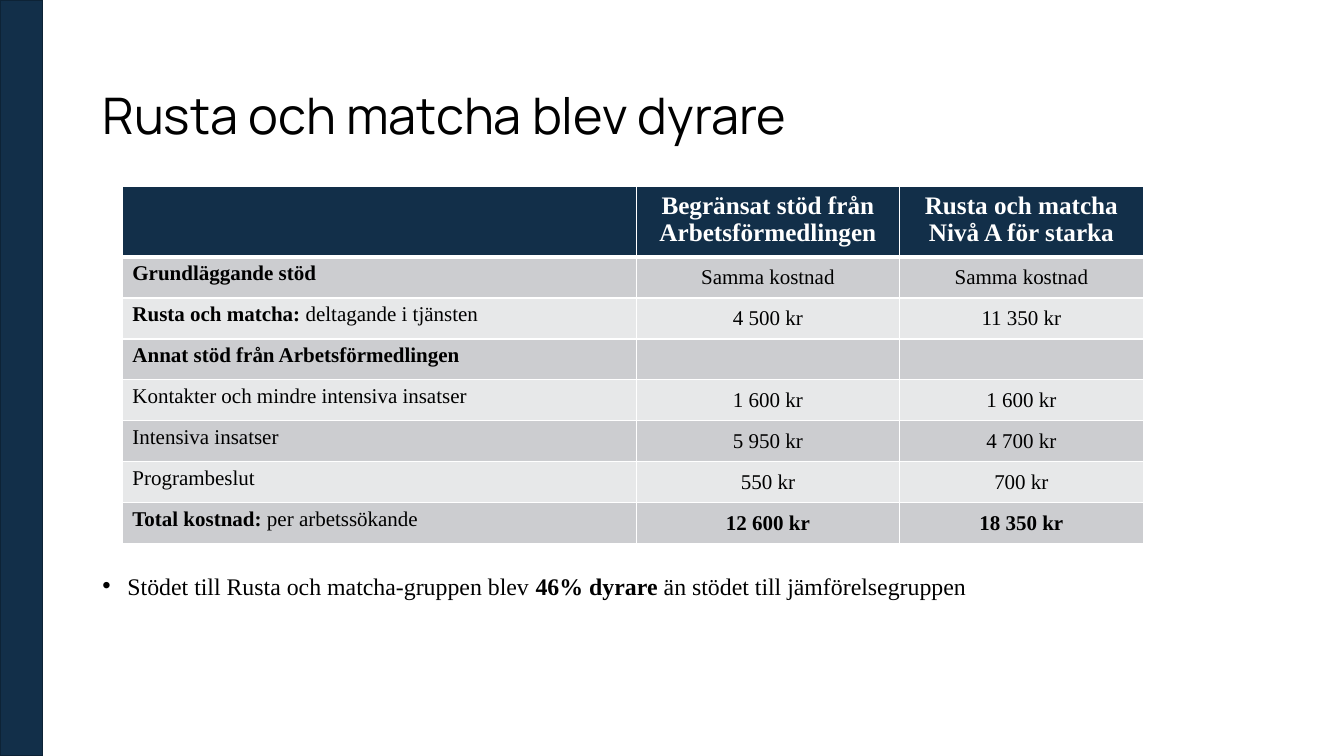
from dataclasses import dataclass

from lxml import etree
from pptx import Presentation
from pptx.dml.color import RGBColor
from pptx.enum.shapes import MSO_SHAPE
from pptx.enum.text import MSO_ANCHOR, PP_ALIGN
from pptx.oxml.ns import qn
from pptx.util import Pt

RECTANGLE = MSO_SHAPE.RECTANGLE
TOP, MIDDLE, BOTTOM = MSO_ANCHOR.TOP, MSO_ANCHOR.MIDDLE, MSO_ANCHOR.BOTTOM
LEFT, CENTER = PP_ALIGN.LEFT, PP_ALIGN.CENTER


@dataclass(frozen=True)
class Theme:
    navy: str = "122F49"
    navy_edge: str = "0D2336"
    white: str = "FFFFFF"
    black: str = "000000"
    bands: tuple = ("CCCDD0", "E7E8E9")
    heading_font: str = "Manrope"
    body_font: str = "Times New Roman"
    title_size: float = 36
    header_size: float = 18
    cell_size: float = 15
    bullet_size: float = 17


THEME = Theme()
COLUMN_WIDTHS = (367.2, 187.9, 174.2)
HEADER_HEIGHT = 46
ROW_HEIGHT = 29.25

HEADER = ("", "Begränsat stöd från Arbetsförmedlingen", "Rusta och matcha\nNivå A för starka")
COST_ROWS = (
    ("Grundläggande stöd", "", "Samma kostnad", "Samma kostnad"),
    ("Rusta och matcha: ", "deltagande i tjänsten", "4 500 kr", "11 350 kr"),
    ("Annat stöd från Arbetsförmedlingen", "", "", ""),
    ("", "Kontakter och mindre intensiva insatser", "1 600 kr", "1 600 kr"),
    ("", "Intensiva insatser", "5 950 kr", "4 700 kr"),
    ("", "Programbeslut", "550 kr", "700 kr"),
    ("Total kostnad:", " per arbetssökande", "12 600 kr", "18 350 kr"),
)


def set_font(font, name, size, color, bold=False):
    font.name = name
    font.size = Pt(size)
    font.bold = bold
    font.color.rgb = RGBColor.from_string(color)


def add_runs(paragraph, parts, size):
    for text, bold in parts:
        if text:
            run = paragraph.add_run()
            run.text = text
            set_font(run.font, THEME.body_font, size, THEME.black, bold)


def add_side_bar(slide, left, top, width, height):
    bar = slide.shapes.add_shape(RECTANGLE, Pt(left), Pt(top), Pt(width), Pt(height))
    bar.shadow.inherit = False
    bar.fill.solid()
    bar.fill.fore_color.rgb = RGBColor.from_string(THEME.navy)
    bar.line.color.rgb = RGBColor.from_string(THEME.navy_edge)
    bar.line.width = Pt(1)


def add_text_frame(slide, left, top, width, height, anchor):
    box = slide.shapes.add_textbox(Pt(left), Pt(top), Pt(width), Pt(height))
    box.text_frame.word_wrap = True
    box.text_frame.vertical_anchor = anchor
    return box.text_frame


def add_title(slide, left, top, width, height):
    text_frame = add_text_frame(slide, left, top, width, height, BOTTOM)
    text_frame.text = "Rusta och matcha blev dyrare"
    paragraph = text_frame.paragraphs[0]
    paragraph.line_spacing = 0.9
    set_font(paragraph.runs[0].font, THEME.heading_font, THEME.title_size, THEME.black)


def set_borders(cell, top_width, bottom_width):
    properties = cell._tc.get_or_add_tcPr()
    widths = {"a:lnL": 1, "a:lnR": 1, "a:lnT": top_width, "a:lnB": bottom_width}
    for tag, width in widths.items():
        line = etree.SubElement(properties, qn(tag), w=str(Pt(width)))
        fill = etree.SubElement(line, qn("a:solidFill"))
        etree.SubElement(fill, qn("a:srgbClr"), val=THEME.white)


def style_cell(cell, fill_color, anchor, top_width=1, bottom_width=1):
    set_borders(cell, top_width, bottom_width)
    cell.fill.solid()
    cell.fill.fore_color.rgb = RGBColor.from_string(fill_color)
    cell.vertical_anchor = anchor


def fill_header(table):
    for column, text in enumerate(HEADER):
        cell = table.cell(0, column)
        cell.text_frame.text = text
        for paragraph in cell.text_frame.paragraphs:
            paragraph.alignment = CENTER
            for run in paragraph.runs:
                set_font(run.font, THEME.body_font, THEME.header_size, THEME.white, True)
        style_cell(cell, THEME.navy, TOP, bottom_width=3)


def fill_cost_rows(table):
    for row, (strong, plain, *costs) in enumerate(COST_ROWS, start=1):
        is_total = row == len(COST_ROWS)
        contents = [((strong, True), (plain, False))]
        contents += [((cost, is_total),) for cost in costs]
        for column, parts in enumerate(contents):
            cell = table.cell(row, column)
            paragraph = cell.text_frame.paragraphs[0]
            paragraph.alignment = CENTER if column else LEFT
            add_runs(paragraph, parts, THEME.cell_size)
            style_cell(
                cell,
                THEME.bands[(row - 1) % 2],
                MIDDLE if column else TOP,
                top_width=3 if row == 1 else 1,
            )


def add_cost_table(slide, left, top):
    height = HEADER_HEIGHT + ROW_HEIGHT * len(COST_ROWS)
    frame = slide.shapes.add_table(
        len(COST_ROWS) + 1, len(COLUMN_WIDTHS),
        Pt(left), Pt(top), Pt(sum(COLUMN_WIDTHS)), Pt(height),
    )
    table = frame.table
    table.horz_banding = False
    for column, width in zip(table.columns, COLUMN_WIDTHS):
        column.width = Pt(width)
    for index, row in enumerate(table.rows):
        row.height = Pt(ROW_HEIGHT if index else HEADER_HEIGHT)
    fill_header(table)
    fill_cost_rows(table)


def add_conclusion(slide, left, top, width, height):
    text_frame = add_text_frame(slide, left, top, width, height, TOP)
    paragraph = text_frame.paragraphs[0]
    properties = paragraph._p.get_or_add_pPr()
    properties.set("marL", str(Pt(18)))
    properties.set("indent", str(-Pt(18)))
    etree.SubElement(properties, qn("a:buFont"), typeface="Arial")
    etree.SubElement(properties, qn("a:buChar"), char="•")
    parts = (
        ("Stödet till Rusta och matcha-gruppen blev ", False),
        ("46% dyrare", True),
        (" än stödet till jämförelsegruppen", False),
    )
    add_runs(paragraph, parts, THEME.bullet_size)


def build_cost_slide(presentation):
    slide = presentation.slides.add_slide(presentation.slide_layouts[6])
    add_side_bar(slide, 0, 0, 30.5, 540)
    add_title(slide, 66, 17.25, 828, 90)
    add_cost_table(slide, 87.4, 133.2)
    add_conclusion(slide, 66, 404.5, 828, 30)


def main():
    presentation = Presentation()
    presentation.slide_width = Pt(960)
    presentation.slide_height = Pt(540)
    build_cost_slide(presentation)
    presentation.save("out.pptx")


if __name__ == "__main__":
    main()
